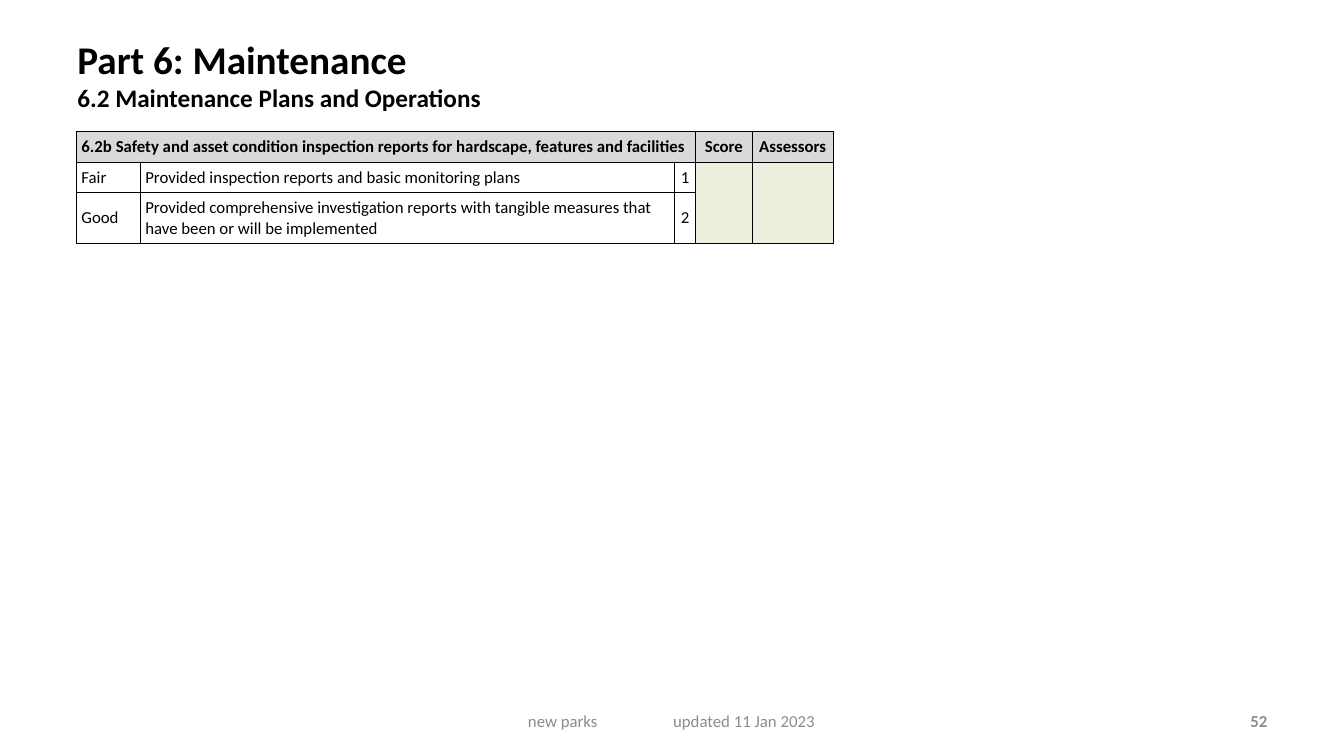
from lxml import etree
from pptx import Presentation
from pptx.dml.color import RGBColor
from pptx.enum.text import MSO_ANCHOR, PP_ALIGN
from pptx.oxml import parse_xml
from pptx.oxml.ns import nsdecls, qn
from pptx.util import Pt

LEFT, CENTER, RIGHT = PP_ALIGN.LEFT, PP_ALIGN.CENTER, PP_ALIGN.RIGHT
TOP, MIDDLE = MSO_ANCHOR.TOP, MSO_ANCHOR.MIDDLE
BLACK = RGBColor(0x00, 0x00, 0x00)
GREY = RGBColor(0x8C, 0x8C, 0x8C)
HEADER_FILL = RGBColor(0xD9, 0xD9, 0xD9)
SCORE_FILL = RGBColor(0xEB, 0xF1, 0xDE)
FONT = "Calibri"


def style(paragraph, color, bold, alignment):
    paragraph.alignment = alignment
    paragraph.font.name = FONT
    paragraph.font.size = Pt(12)
    paragraph.font.bold = bold
    paragraph.font.color.rgb = color


def add_box(left, top, width, height, anchor):
    box = slide.shapes.add_textbox(Pt(left), Pt(top), Pt(width), Pt(height))
    box.text_frame.word_wrap = True
    box.text_frame.vertical_anchor = anchor
    return box.text_frame


presentation = Presentation()
presentation.slide_width = Pt(960)
presentation.slide_height = Pt(540)
slide = presentation.slides.add_slide(presentation.slide_layouts[6])

page_number = add_box(688.3, 500.4, 224, 28.8, MIDDLE).paragraphs[0]
page_number.text = "52"
style(page_number, GREY, True, RIGHT)

title = add_box(48.2, 21.6, 746, 71.3, TOP).paragraphs[0]
style(title, BLACK, True, LEFT)
heading = title.add_run()
heading.text = "Part 6: Maintenance"
heading.font.size = Pt(28)
title.add_line_break()
subheading = title.add_run()
subheading.text = "6.2 Maintenance Plans and Operations"
subheading.font.size = Pt(18)

rows = [
    ["6.2b Safety and asset condition inspection reports for hardscape, features and facilities",
     "", "", "Score", "Assessors"],
    ["Fair", "Provided inspection reports and basic monitoring plans", "1", "", ""],
    ["Good", "Provided comprehensive investigation reports with tangible measures "
     "that have been or will be implemented", "2", "", ""],
]
column_widths = [45.6, 381.6, 15.1, 40.5, 57.8]
row_heights = [21.8, 21.8, 36.5]
table = slide.shapes.add_table(
    len(rows), len(column_widths), Pt(54.6), Pt(94),
    Pt(sum(column_widths)), Pt(sum(row_heights))).table
table.first_row = False
table.horz_banding = False
for column, width in zip(table.columns, column_widths):
    column.width = Pt(width)
for row, height in zip(table.rows, row_heights):
    row.height = Pt(height)

for row_index, texts in enumerate(rows):
    for column_index, text in enumerate(texts):
        cell = table.cell(row_index, column_index)
        cell.vertical_anchor = MIDDLE
        cell.margin_left = cell.margin_right = Pt(3.6)
        cell.margin_top = cell.margin_bottom = Pt(3.6)
        properties = cell._tc.get_or_add_tcPr()
        for side in ("lnL", "lnR", "lnT", "lnB"):
            properties.append(parse_xml(
                f'<a:{side} {nsdecls("a")} w="12700"><a:solidFill>'
                f'<a:srgbClr val="{BLACK}"/></a:solidFill></a:{side}>'))
        is_header = row_index == 0
        if is_header or column_index > 2:
            cell.fill.solid()
            cell.fill.fore_color.rgb = HEADER_FILL if is_header else SCORE_FILL
        else:
            cell.fill.background()
        paragraph = cell.text_frame.paragraphs[0]
        paragraph.text = text
        style(paragraph, BLACK, is_header, CENTER if column_index > 1 else LEFT)

table.cell(0, 0).merge(table.cell(0, 2))
for column_index in (3, 4):
    table.cell(1, column_index).merge(table.cell(2, column_index))

footer_frame = add_box(328.3, 500.4, 303.8, 28.8, MIDDLE)
footer_frame.margin_left = Pt(48.8)
footer = footer_frame.paragraphs[0]
footer.text = "new parks\tupdated 11 Jan 2023"
tab_list = etree.SubElement(footer._p.get_or_add_pPr(), qn("a:tabLst"))
etree.SubElement(tab_list, qn("a:tab"), pos=str(Pt(103.7)), algn="l")
style(footer, GREY, False, LEFT)

presentation.save("out.pptx")
